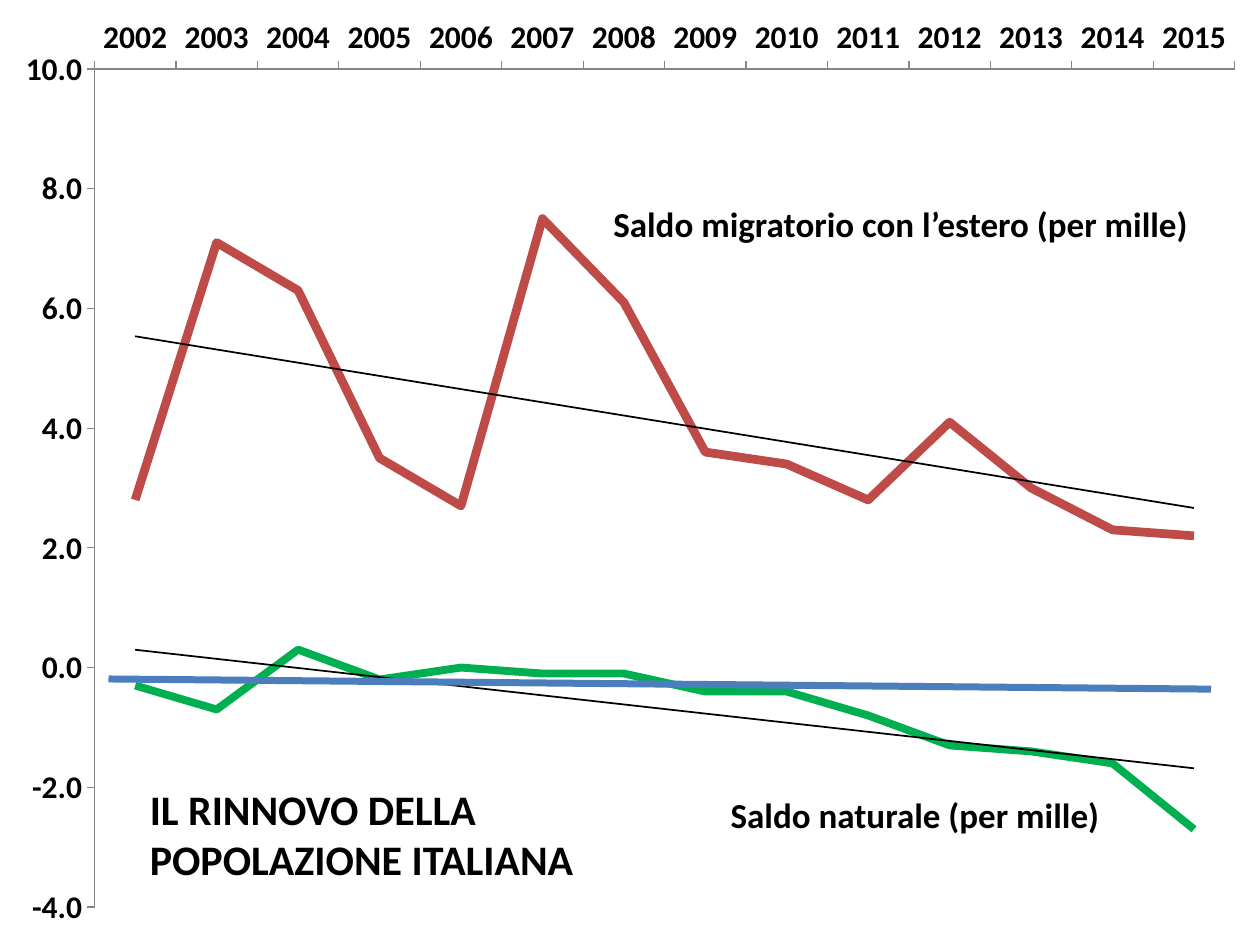
from dataclasses import dataclass

from lxml.etree import SubElement
from pptx import Presentation
from pptx.chart.data import CategoryChartData as Data
from pptx.dml.color import RGBColor as RGB
from pptx.enum.chart import XL_AXIS_CROSSES as Cross
from pptx.enum.chart import XL_CHART_TYPE as Kind
from pptx.enum.chart import XL_MARKER_STYLE as Mark
from pptx.enum.chart import XL_TICK_LABEL_POSITION as Place
from pptx.enum.chart import XL_TICK_MARK as Tick
from pptx.enum.shapes import MSO_CONNECTOR as Link
from pptx.enum.text import MSO_AUTO_SIZE as Fit
from pptx.oxml import parse_xml
from pptx.oxml.ns import nsdecls, qn
from pptx.util import Pt


@dataclass(frozen=True)
class Theme:
    font: str = "Calibri"
    ink: str = "000000"
    axis: str = "868686"
    green: str = "00B050"
    red: str = "BE4B48"
    blue: str = "4B7EBC"
    tick: int = 18
    label: int = 20
    title: int = 24


THEME = Theme()
YEARS = [str(year) for year in range(2002, 2016)]
SERIES = [
    ("Saldo naturale", THEME.green,
     [-0.3, -0.7, 0.3, -0.2, 0, -0.1, -0.1, -0.4, -0.4, -0.8, -1.3, -1.4, -1.6, -2.7]),
    ("Saldo migratorio", THEME.red,
     [2.8, 7.1, 6.3, 3.5, 2.7, 7.5, 6.1, 3.6, 3.4, 2.8, 4.1, 3, 2.3, 2.2]),
]


def paint(line, color, width):
    line.color.rgb = RGB.from_string(color)
    line.width = Pt(width)


def style(font, size):
    font.name = THEME.font
    font.size = Pt(size)
    font.bold = True
    font.color.rgb = RGB.from_string(THEME.ink)


def add_trend(row):
    trend = parse_xml(
        f'<c:trendline {nsdecls("c", "a")}><c:spPr><a:ln w="{Pt(1)}"><a:solidFill>'
        f'<a:srgbClr val="{THEME.ink}"/></a:solidFill></a:ln></c:spPr>'
        '<c:trendlineType val="linear"/><c:dispRSqr val="0"/><c:dispEq val="0"/>'
        '</c:trendline>')
    row._element.find(qn("c:cat")).addprevious(trend)


def set_plot(chart, x, y, w, h):
    area = chart._chartSpace.chart.plotArea
    for old in area.findall(qn("c:layout")):
        area.remove(old)
    parts = [("layoutTarget", "inner"), ("xMode", "edge"), ("yMode", "edge"),
             ("x", x), ("y", y), ("w", w), ("h", h)]
    body = "".join(f'<c:{name} val="{val}"/>' for name, val in parts)
    area.insert(0, parse_xml(
        f'<c:layout {nsdecls("c")}><c:manualLayout>{body}</c:manualLayout></c:layout>'))


def add_graph(slide, box):
    data = Data(number_format="0.0")
    data.categories = YEARS
    for name, _, vals in SERIES:
        data.add_series(name, vals)
    chart = slide.shapes.add_chart(Kind.LINE, *map(Pt, box), data).chart
    chart.has_legend = False
    chart.has_title = False
    style(chart.font, THEME.tick)
    plot = chart.plots[0]
    plot.vary_by_categories = False
    for row, (_, color, _) in zip(plot.series, SERIES):
        row.smooth = False
        row.marker.style = Mark.NONE
        paint(row.format.line, color, 5 if color == THEME.red else 4.5)
        add_trend(row)
    years, rates = chart.category_axis, chart.value_axis
    for axis in (years, rates):
        axis.has_major_gridlines = False
        axis.major_tick_mark = Tick.OUTSIDE
        axis.minor_tick_mark = Tick.NONE
        paint(axis.format.line, THEME.axis, 0.75)
        style(axis.tick_labels.font, THEME.tick)
    years.tick_label_position = Place.HIGH
    rates.minimum_scale, rates.maximum_scale, rates.major_unit = -4, 10, 2
    rates.crosses = Cross.MAXIMUM
    rates.tick_labels.number_format = "0.0"
    rates.tick_labels.number_format_is_linked = False
    set_plot(chart, 0.075, 0.073, 0.905, 0.887)


def add_rule(slide, ends):
    rule = slide.shapes.add_connector(Link.STRAIGHT, *map(Pt, ends))
    paint(rule.line, THEME.blue, 4)
    SubElement(rule._element.spPr, qn("a:effectLst"))


def add_note(slide, box, text, size):
    frame = slide.shapes.add_textbox(*map(Pt, box)).text_frame
    frame.word_wrap = False
    frame.auto_size = Fit.SHAPE_TO_FIT_TEXT
    frame.text = text
    for para in frame.paragraphs:
        for run in para.runs:
            style(run.font, size)


def main():
    deck = Presentation()
    deck.slide_width, deck.slide_height = Pt(720), Pt(540)
    slide = deck.slides.add_slide(deck.slide_layouts[6])
    add_graph(slide, (0, 0, 720, 540))
    add_rule(slide, (62, 388, 692, 393.8))
    add_note(slide, (343.4, 112.3, 345.6, 31.5),
             "Saldo migratorio con l’estero (per mille)", THEME.label)
    add_note(slide, (410.4, 450, 226.8, 31.5), "Saldo naturale (per mille)", THEME.label)
    add_note(slide, (78.5, 444.2, 258.5, 65.4),
             "IL RINNOVO DELLA\nPOPOLAZIONE ITALIANA", THEME.title)
    deck.save("out.pptx")


if __name__ == "__main__":
    main()
